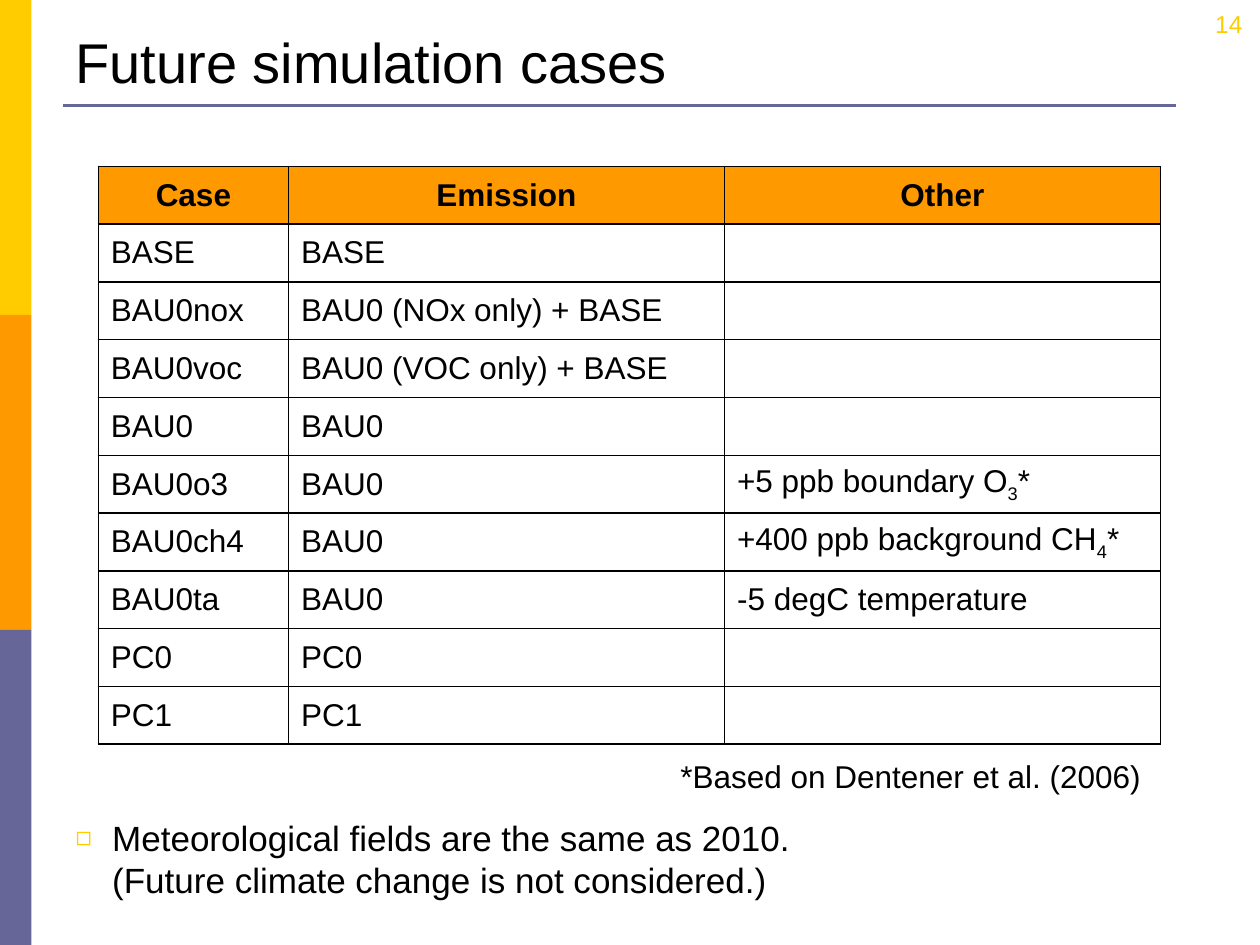
"""Build the slide that lists the future simulation cases."""
from lxml.etree import SubElement
from pptx import Presentation
from pptx.dml.color import RGBColor
from pptx.enum.shapes import MSO_CONNECTOR, MSO_SHAPE
from pptx.enum.text import MSO_ANCHOR as ANCHOR, MSO_AUTO_SIZE as AUTO, PP_ALIGN as ALIGN
from pptx.oxml import parse_xml
from pptx.oxml.ns import nsdecls, qn
from pptx.util import Inches, Pt

BLACK = RGBColor(0x00, 0x00, 0x00)
WHITE = RGBColor(0xFF, 0xFF, 0xFF)
YELLOW = RGBColor(0xFF, 0xCC, 0x00)
ORANGE = RGBColor(0xFF, 0x99, 0x00)
PURPLE = RGBColor(0x66, 0x66, 0x99)

CASES = [
    ("Case", "Emission", "Other"),
    ("BASE", "BASE", ""),
    ("BAU0nox", "BAU0 (NOx only) + BASE", ""),
    ("BAU0voc", "BAU0 (VOC only) + BASE", ""),
    ("BAU0", "BAU0", ""),
    ("BAU0o3", "BAU0", "+5 ppb boundary O|3|*"),
    ("BAU0ch4", "BAU0", "+400 ppb background CH|4|*"),
    ("BAU0ta", "BAU0", "-5 degC temperature"),
    ("PC0", "PC0", ""),
    ("PC1", "PC1", ""),
]
COLUMN_WIDTHS = (1.51, 3.46, 3.46)
ROW_HEIGHT = 0.459


def place(part, left, top, width, height, **frame_format):
    part.left, part.top = Inches(left), Inches(top)
    part.width, part.height = Inches(width), Inches(height)
    values = {"word_wrap": True, "auto_size": AUTO.NONE, "vertical_anchor": ANCHOR.TOP}
    for name, value in {**values, **frame_format}.items():
        setattr(part.text_frame, name, value)


def write(paragraph, text, size, color=BLACK, bold=False, align=ALIGN.LEFT):
    paragraph.alignment = align
    for index, piece in enumerate(text.split("|")):
        run = paragraph.add_run()
        run.text = piece
        for name, value in {"name": "Arial", "size": Pt(size), "bold": bold}.items():
            setattr(run.font, name, value)
        run.font.color.rgb = color
        if index % 2:
            run._r.get_or_add_rPr().set("baseline", "-25000")


deck = Presentation()
deck.slide_width, deck.slide_height = Inches(10), Inches(7.5)
slide = deck.slides.add_slide(deck.slide_layouts[1])
shapes = slide.shapes

for index, color in enumerate((YELLOW, ORANGE, PURPLE)):
    band = shapes.add_shape(MSO_SHAPE.RECTANGLE, 0, Inches(2.5 * index), Inches(0.25), Inches(2.5))
    band.shadow.inherit = False
    band.fill.solid()
    band.fill.fore_color.rgb = color
    band.line.fill.background()

title_rule = shapes.add_connector(
    MSO_CONNECTOR.STRAIGHT, Inches(0.5), Inches(0.84), Inches(9.33), Inches(0.84))
title_rule.line.color.rgb = PURPLE
title_rule.line.width = Pt(1.5)
SubElement(title_rule._element.spPr, qn("a:effectLst"))

title = shapes.title
place(title, 0.5, 0.13, 9, 0.67, vertical_anchor=ANCHOR.BOTTOM)
write(title.text_frame.paragraphs[0], "Future simulation cases", 32)

remarks = slide.placeholders[1]
place(remarks, 0.5, 6.43, 9, 0.79)
remark = remarks.text_frame.paragraphs[0]
aside = remarks.text_frame.add_paragraph()
write(remark, "Meteorological fields are the same as 2010.", 20)
write(aside, "(Future climate change is not considered.)", 20)
remark.space_before, aside.space_before = Pt(4), Pt(0)
for paragraph, indent in ((remark, -0.29), (aside, 0)):
    properties = paragraph._p.get_or_add_pPr()
    properties.set("marL", str(Inches(0.29)))
    properties.set("indent", str(Inches(indent)))
bullet = remark._p.pPr
SubElement(SubElement(bullet, qn("a:buClr")), qn("a:srgbClr"), val=str(YELLOW))
SubElement(bullet, qn("a:buSzPct"), val="75000")
SubElement(bullet, qn("a:buChar"), char="◻")
SubElement(aside._p.pPr, qn("a:buNone"))

page_number = shapes.add_textbox(0, 0, 0, 0)
place(page_number, 7.63, 0.02, 2.33, 0.5)
write(page_number.text_frame.paragraphs[0], "14", 14, YELLOW, align=ALIGN.RIGHT)

table = shapes.add_table(
    len(CASES), len(COLUMN_WIDTHS), Inches(0.78), Inches(1.32),
    Inches(sum(COLUMN_WIDTHS)), Inches(ROW_HEIGHT * len(CASES))).table
table.first_row = table.horz_banding = False
for column, width in zip(table.columns, COLUMN_WIDTHS):
    column.width = Inches(width)
for row_index, (row, case) in enumerate(zip(table.rows, CASES)):
    row.height = Inches(ROW_HEIGHT)
    header = row_index == 0
    for cell, text in zip(row.cells, case):
        cell.vertical_anchor = ANCHOR.MIDDLE
        if text:
            write(cell.text_frame.paragraphs[0], text, 18, bold=header,
                  align=ALIGN.CENTER if header else ALIGN.LEFT)
        borders = cell._tc.get_or_add_tcPr()
        for side in ("lnL", "lnR", "lnT", "lnB"):
            borders.append(parse_xml(
                f'<a:{side} {nsdecls("a")} w="{Pt(1)}"><a:solidFill>'
                f'<a:srgbClr val="{BLACK}"/></a:solidFill></a:{side}>'))
        if header:
            cell.fill.solid()
            cell.fill.fore_color.rgb = ORANGE
        else:
            cell.fill.background()

footnote = shapes.add_textbox(0, 0, 0, 0)
margins = dict.fromkeys(
    ("margin_left", "margin_top", "margin_right", "margin_bottom"), Inches(0.04))
place(footnote, 5.36, 5.97, 3.86, 0.38, **margins)
footnote.fill.solid()
footnote.fill.fore_color.rgb = WHITE
write(footnote.text_frame.paragraphs[0], "*Based on Dentener et al. (2006)", 18)

deck.save("out.pptx")
